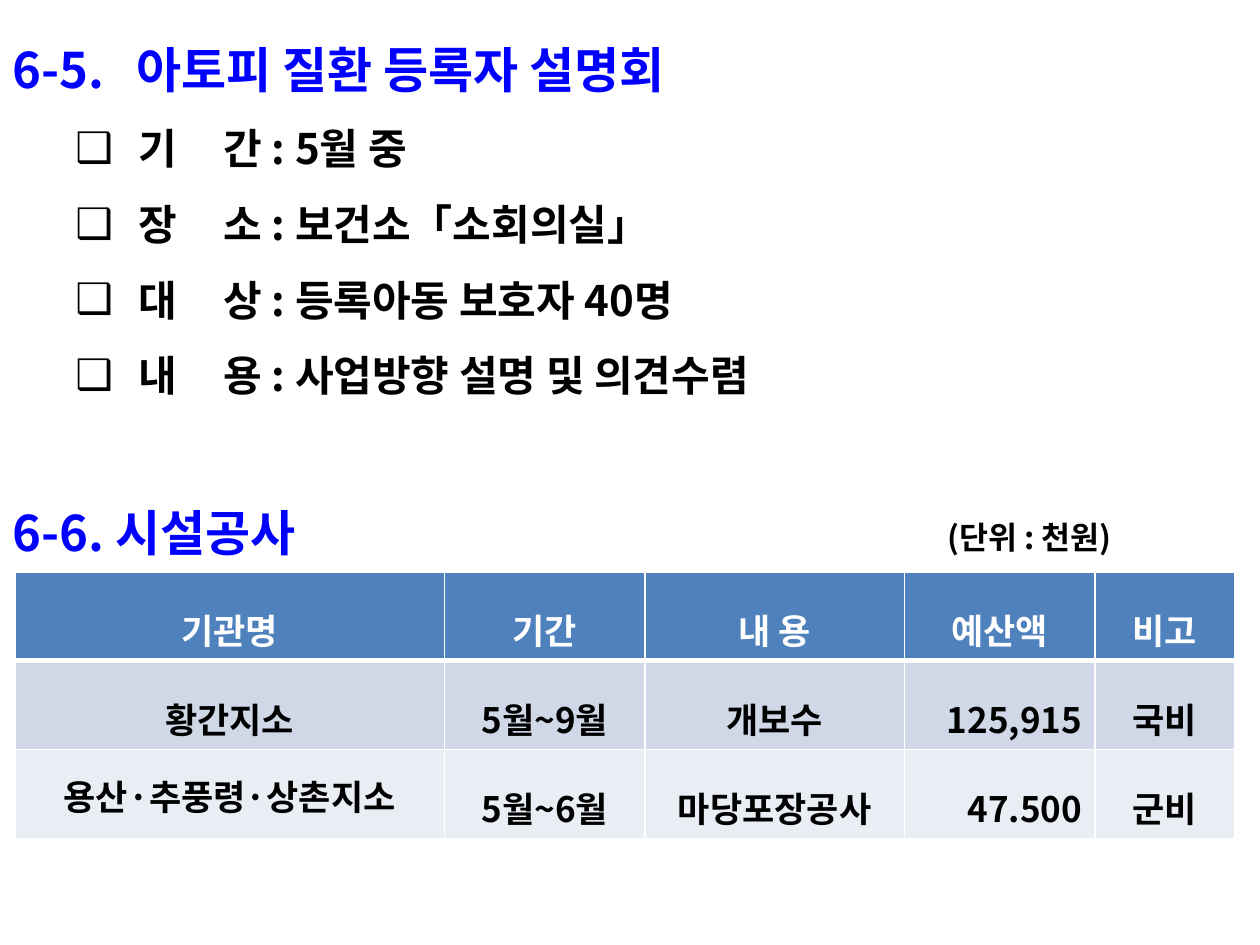
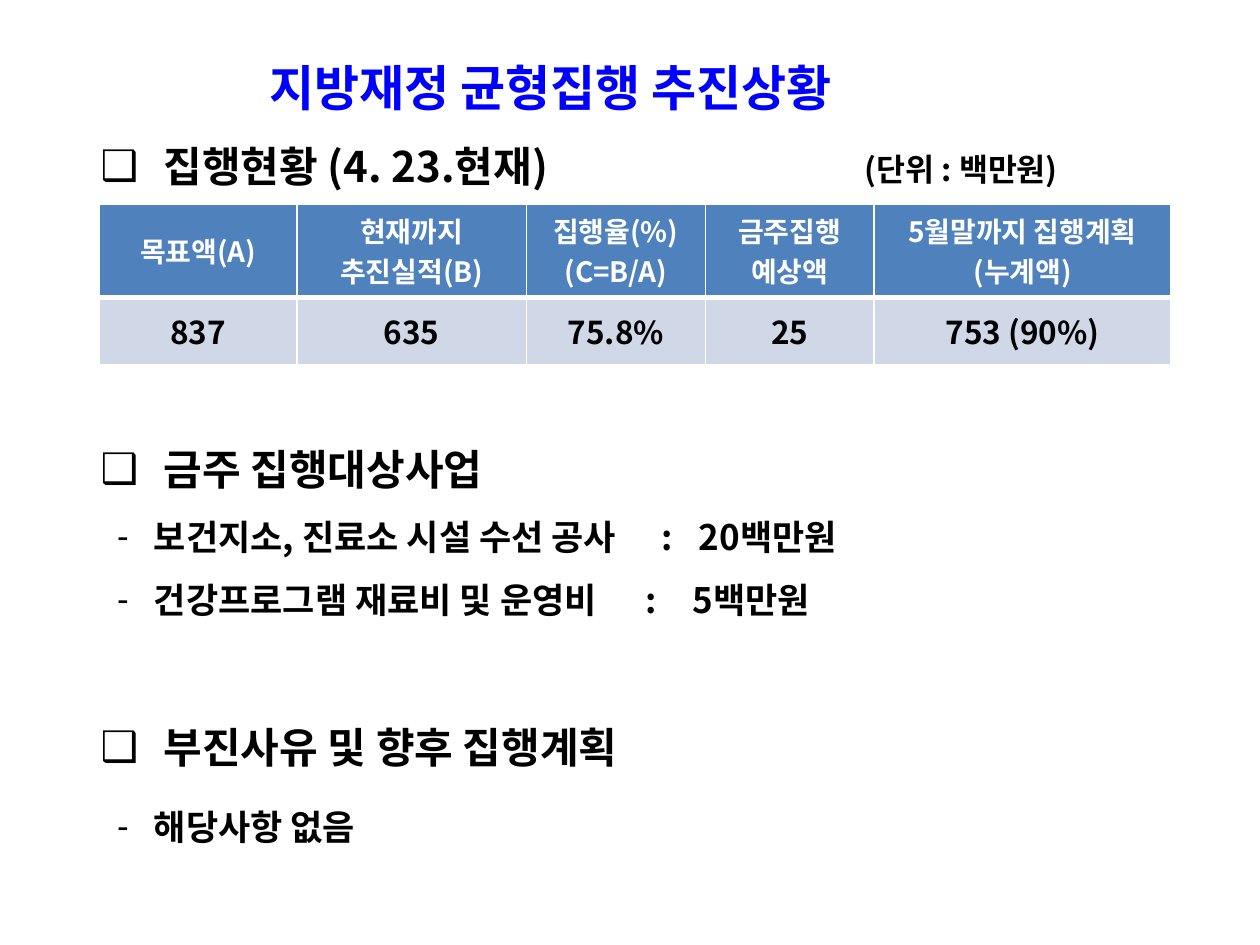
from lxml.etree import SubElement
from pptx import Presentation
from pptx.dml.color import RGBColor
from pptx.enum.text import MSO_ANCHOR as Anchor, MSO_AUTO_SIZE as AutoSize, PP_ALIGN as Align
from pptx.oxml.ns import qn
from pptx.util import Cm, Pt

FONT = "Noto Sans CJK KR"
BLUE = RGBColor(0x00, 0x00, 0xFF)
BLACK = RGBColor(0x00, 0x00, 0x00)
WHITE = RGBColor(0xFF, 0xFF, 0xFF)
HEADER_FILL = RGBColor(0x4F, 0x81, 0xBD)
ROW_FILLS = [RGBColor(0xD0, 0xD8, 0xE8), RGBColor(0xE9, 0xED, 0xF4)]

HEADING_SIZE, ITEM_SIZE, DETAIL_SIZE, UNIT_SIZE = 28, 24, 20, 18
LEADING = 1.8  # line pitch as a multiple of the text size


def write_text(para, text, *, size, color=BLACK, align=Align.LEFT, spacing=None, before=0):
    """Put one bold span in a paragraph; spacing defaults to a fixed line pitch."""
    para.alignment = align
    para.line_spacing = spacing or Pt(size * LEADING)
    para.space_before = Pt(before)
    span = para.add_run()
    span.text = text
    font = span.font
    font.name, font.size, font.bold = FONT, Pt(size), True
    font.color.rgb = color
    latin = span._r.rPr.find(qn("a:latin"))
    east_asian = SubElement(span._r.rPr, qn("a:ea"), typeface=FONT)
    latin.addnext(east_asian)


def set_indent(para, bullet, margin, hanging):
    properties = para._p.get_or_add_pPr()
    properties.set("marL", str(Cm(margin)))
    properties.set("indent", str(-Cm(hanging)))
    bullet_color = SubElement(properties, qn("a:buClr"))
    SubElement(bullet_color, qn("a:srgbClr"), val=str(BLACK))
    SubElement(properties, qn("a:buChar"), char=bullet)


def set_tabs(para, stops, margin=0):
    """Set stops for readers that count from the box edge or from the indent."""
    places = sorted({stop - offset for stop in stops for offset in (0, margin)})
    tab_list = SubElement(para._p.get_or_add_pPr(), qn("a:tabLst"))
    for place in places:
        SubElement(tab_list, qn("a:tab"), pos=str(Cm(place)), algn="l")


def set_borders(cell, **widths):
    properties = cell._tc.get_or_add_tcPr()
    for index, side in enumerate("LRTB"):
        line = SubElement(properties, qn("a:ln" + side), w=str(Pt(widths.get(side, 1))))
        fill = SubElement(line, qn("a:solidFill"))
        SubElement(fill, qn("a:srgbClr"), val=str(WHITE))
        properties.remove(line)
        properties.insert(index, line)


class Report:
    def __init__(self):
        self.deck = Presentation()
        self.deck.slide_width, self.deck.slide_height = Cm(25.4), Cm(19.05)
        self.page = None

    def add_page(self):
        self.page = self.deck.slides.add_slide(self.deck.slide_layouts[1])

    def frame(self, box, left, top, width, height):
        box.left, box.top, box.width, box.height = map(Cm, (left, top, width, height))
        text_frame = box.text_frame
        text_frame.word_wrap = True
        text_frame.auto_size = AutoSize.NONE
        text_frame.vertical_anchor = Anchor.TOP
        text_frame.margin_left = text_frame.margin_right = 0
        text_frame.margin_top = text_frame.margin_bottom = 0
        return text_frame

    def title(self, text, left, top, tabs=()):
        para = self.frame(self.page.shapes.title, left, top, 19, 1.8).paragraphs[0]
        write_text(para, text, size=HEADING_SIZE, color=BLUE)
        if tabs:
            set_tabs(para, tabs)

    def label(self, text, left, top, width, size=UNIT_SIZE, color=BLACK):
        box = self.page.shapes.add_textbox(0, 0, 0, 0)
        para = self.frame(box, left, top, width, 1.8).paragraphs[0]
        write_text(para, text, size=size, color=color)

    def items(self, entries, left, top, height):
        """Each entry is (level, text, space before, tab stops)."""
        body = self.frame(self.page.placeholders[1], left, top, 22, height)
        for index, (level, text, before, tabs) in enumerate(entries):
            para = body.add_paragraph() if index else body.paragraphs[0]
            size = DETAIL_SIZE if level else ITEM_SIZE
            margin = 2.34 if level else 2.54
            write_text(para, text, size=size, before=before)
            set_indent(para, "-" if level else "❑", margin, 0.74 if level else 1.27)
            if tabs:
                set_tabs(para, tabs, margin)

    def table(self, rows, left, top, widths, heights, sizes, spacing,
              right_columns=(), exact_cells=()):
        """Sizes are (header, body); exact_cells keep a fixed 30 pt pitch."""
        grid = self.page.shapes.add_table(
            len(rows), len(widths), Cm(left), Cm(top),
            Cm(sum(widths)), Cm(sum(heights))).table
        for column, width in zip(grid.columns, widths):
            column.width = Cm(width)
        for r, (row, height) in enumerate(zip(rows, heights)):
            grid.rows[r].height = Cm(height)
            for c, text in enumerate(row):
                cell = grid.cell(r, c)
                cell.vertical_anchor = Anchor.MIDDLE
                cell.fill.solid()
                cell.fill.fore_color.rgb = ROW_FILLS[(r - 1) % 2] if r else HEADER_FILL
                set_borders(cell, T=3 if r == 1 else 1, B=1 if r else 3)
                for index, line in enumerate(text.split("\n")):
                    para = cell.text_frame.add_paragraph() if index else cell.text_frame.paragraphs[0]
                    write_text(
                        para, line, size=sizes[1] if r else sizes[0],
                        color=BLACK if r else WHITE,
                        align=Align.RIGHT if r and c in right_columns else Align.CENTER,
                        spacing=Pt(30) if (r, c) in exact_cells else spacing)


def build_briefing_page(report):
    report.add_page()
    # Briefing for registered patients
    report.title("6-5.\t아토피 질환 등록자 설명회", 0.25, 0.2, tabs=[2.5])
    details = ["기\t간 : 5월 중", "장\t소 : 보건소「소회의실」",
               "대\t상 : 등록아동 보호자 40명", "내\t용 : 사업방향 설명 및 의견수렴"]
    report.items([(0, text, 0, [4.26]) for text in details], 0.25, 1.97, 6.5)

    # Facility works
    report.label("6-6. 시설공사", 0.25, 9.53, 12, HEADING_SIZE, BLUE)
    report.label("(단위 : 천원)", 19.1, 10.06, 5)
    report.table(
        [["기관명", "기간", "내 용", "예산액", "비고"],
         ["황간지소", "5월~9월", "개보수", "125,915", "국비"],
         ["용산·추풍령·상촌지소", "5월~6월", "마당포장공사", "47.500", "군비"]],
        0.3, 11.53, [8.66, 4.04, 5.23, 3.84, 2.82], [1.78] * 3,
        sizes=(20, 20), spacing=1.5, right_columns=[3], exact_cells=[(2, 0)])


def build_budget_page(report):
    report.add_page()
    report.title("지방재정 균형집행 추진상황", 5.43, 0.56)
    # Spending status, projects of the week and outlook
    report.items(
        [(0, "집행현황 (4. 23.현재)", 0, []),
         (0, "금주 집행대상사업", 130, []),
         (1, "보건지소, 진료소 시설 수선 공사\t:\t20백만원", 0, [12.57, 13.33]),
         (1, "건강프로그램 재료비 및 운영비\t:\t5백만원", 0, [12.26, 13.2]),
         (0, "부진사유 및 향후 집행계획", 43.5, []),
         (1, "해당사항 없음", 7, [])],
        0.76, 2.33, 15)

    # Spending table
    report.label("(단위 : 백만원)", 17.43, 2.64, 6)
    report.table(
        [["목표액(A)", "현재까지\n추진실적(B)", "집행율(%)\n(C=B/A)",
          "금주집행\n예상액", "5월말까지 집행계획\n(누계액)"],
         ["837", "635", "75.8%", "25", "753 (90%)"]],
        2, 4.11, [3.99, 4.62, 3.61, 3.4, 5.99], [1.87, 1.36],
        sizes=(16, 18), spacing=1.0)


def main():
    report = Report()
    build_briefing_page(report)
    build_budget_page(report)
    report.deck.save("out.pptx")


if __name__ == "__main__":
    main()
